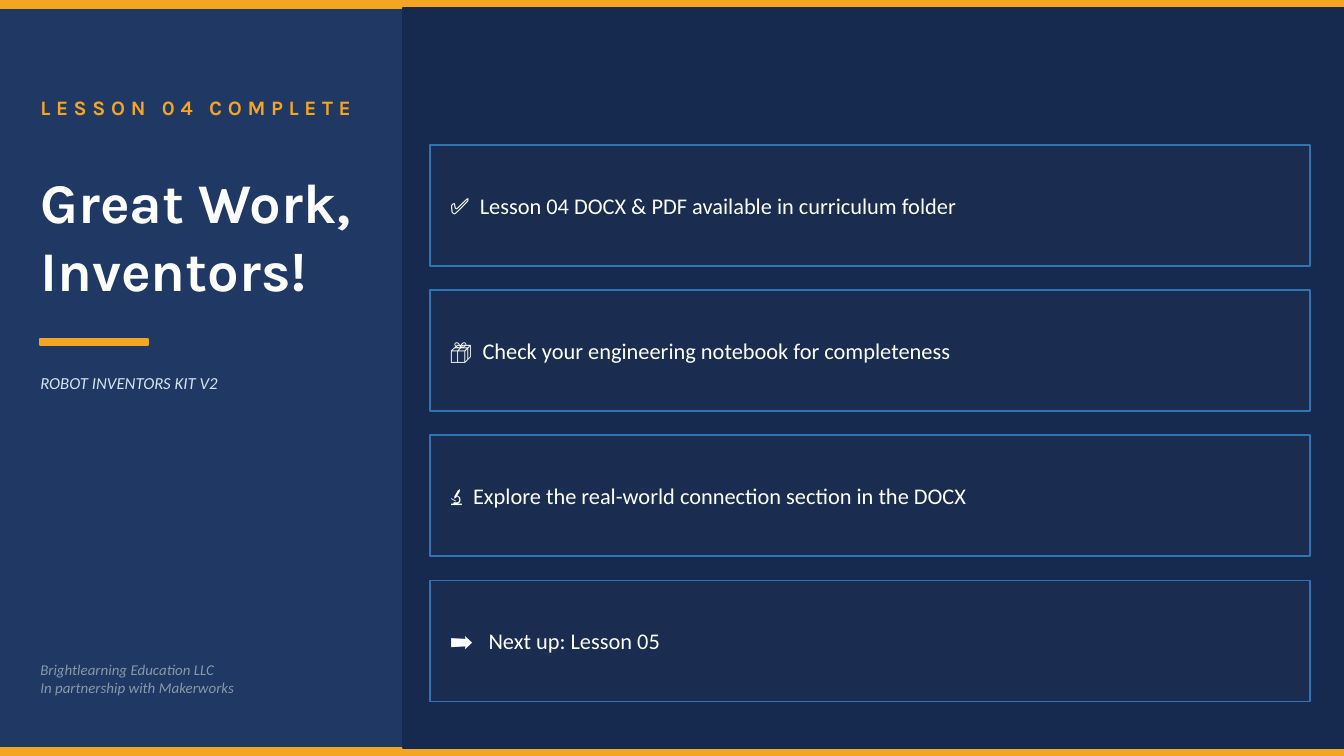
from pptx import Presentation
from pptx.dml.color import RGBColor as RGB
from pptx.enum.shapes import MSO_SHAPE as SHAPE
from pptx.enum.text import MSO_ANCHOR as ANCHOR
from pptx.oxml.ns import qn
from pptx.util import Pt
from lxml.etree import SubElement

PX = 4572
W, H, BAR = 2000, 1125, 12
COLORS = {
    "bg": "1F3864",
    "accent": "F4A522",
    "panel": "162A4F",
    "card": "1A2D50",
    "border": "2E75B6",
    "white": "FFFFFF",
    "pale": "D6E4F0",
    "muted": "8899AA",
}


def rgb(name):
    return RGB.from_string(COLORS[name])


class Deck:
    heading = "Karla"
    body = "Calibri"

    def __init__(self):
        self.prs = Presentation()
        self.prs.slide_width, self.prs.slide_height = W * PX, H * PX
        self.s = self.prs.slides.add_slide(self.prs.slide_layouts[6])
        fill = self.s.background.fill
        fill.solid()
        fill.fore_color.rgb = rgb("bg")

    def rect(self, x, y, w, h, fill, line=None):
        sp = self.s.shapes.add_shape(SHAPE.RECTANGLE, x * PX, y * PX, w * PX, h * PX)
        sp.shadow.inherit = False
        sp.fill.solid()
        sp.fill.fore_color.rgb = rgb(fill)
        sp.line.color.rgb = rgb(line or fill)
        sp.line.width = Pt(1)

    def text(self, x, y, w, h, lines, size, color, font=body,
             bold=False, italic=False, spacing=0, tab=None):
        tf = self.s.shapes.add_textbox(x * PX, y * PX, w * PX, h * PX).text_frame
        tf.word_wrap = True
        tf.vertical_anchor = ANCHOR.MIDDLE
        tf.margin_left = tf.margin_top = tf.margin_right = tf.margin_bottom = 0
        for i, line in enumerate(lines):
            p = tf.add_paragraph() if i else tf.paragraphs[0]
            if tab:
                tabs = SubElement(p._p.get_or_add_pPr(), qn("a:tabLst"))
                SubElement(tabs, qn("a:tab"), pos=str(tab * PX), algn="l")
            r = p.add_run()
            r.text = line
            r.font.name, r.font.size = font, Pt(size)
            r.font.bold, r.font.italic = bold, italic
            r.font.color.rgb = rgb(color)
            if spacing:
                r.font._element.set("spc", str(spacing * 100))

    def card(self, y, icon, label, tab):
        self.rect(640, y, 1310, 180, "card", "border")
        self.text(670, y, 1250, 180, [f"{icon}\t{label}"], 12, "white", tab=tab)


def main():
    deck = Deck()
    for y in (0, H - BAR):
        deck.rect(0, y, W, BAR, "accent")
    deck.rect(600, BAR, 1400, H - 2 * BAR, "panel")

    deck.text(60, 120, 500, 80, ["LESSON 04 COMPLETE"], 11, "accent",
              Deck.heading, bold=True, spacing=3)
    deck.text(60, 210, 500, 280, ["Great Work,", "Inventors!"], 30, "white",
              Deck.heading, bold=True)
    deck.rect(60, 504, 160, 10, "accent")
    deck.text(60, 540, 500, 60, ["ROBOT INVENTORS KIT V2"], 9, "pale", italic=True)
    deck.text(60, 960, 500, 100,
              ["Brightlearning Education LLC", "In partnership with Makerworks"],
              8, "muted", italic=True)

    steps = [
        ("✅", "Lesson 04 DOCX & PDF available in curriculum folder", 44),
        ("📦", "Check your engineering notebook for completeness", 48),
        ("🔬", "Explore the real-world connection section in the DOCX", 34),
        ("➡️", "Next up: Lesson 05", 57),
    ]
    for i, step in enumerate(steps):
        deck.card(216 * (i + 1), *step)
    deck.prs.save("out.pptx")


if __name__ == "__main__":
    main()
